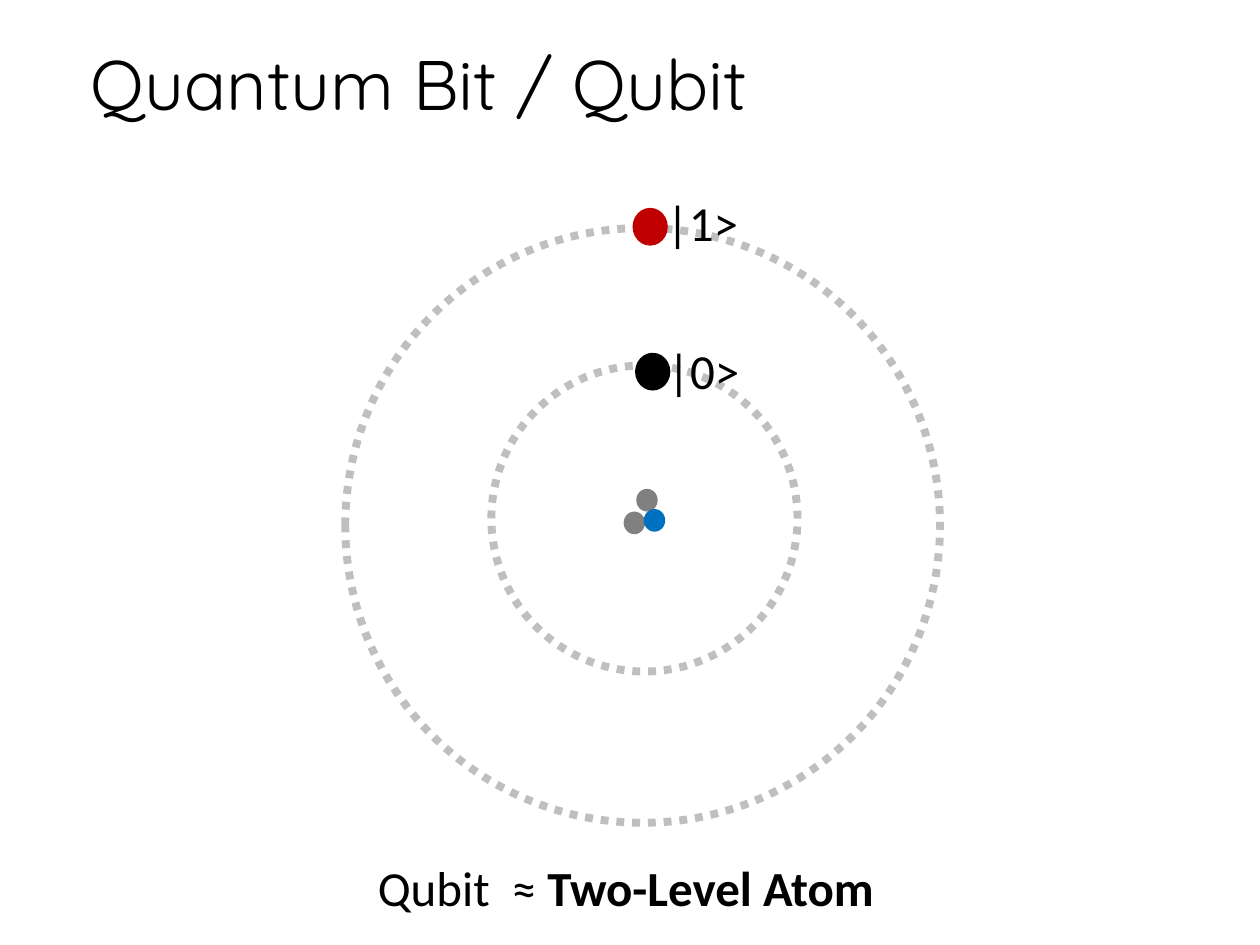
"""Build the qubit slide: a two-level atom with its nucleus and two orbits."""
from pptx import Presentation
from pptx.dml.color import RGBColor
from pptx.enum.dml import MSO_LINE
from pptx.enum.shapes import MSO_SHAPE as SHAPE
from pptx.enum.text import MSO_ANCHOR as ANCHOR, MSO_AUTO_SIZE as FIT
from pptx.util import Inches, Pt

BLACK = RGBColor(0x00, 0x00, 0x00)
WHITE = RGBColor(0xFF, 0xFF, 0xFF)
SILVER = RGBColor(0xBF, 0xBF, 0xBF)
GRAY = RGBColor(0x80, 0x80, 0x80)
RED = RGBColor(0xC0, 0x00, 0x00)
BLUE = RGBColor(0x00, 0x70, 0xC0)

prs = Presentation()
prs.slide_width, prs.slide_height = Inches(10), Inches(7.5)
COL, ROW = prs.slide_width / 100, prs.slide_height / 75
s = prs.slides.add_slide(prs.slide_layouts[6])


def add_ball(shapes, col, row, cols, rows, color):
    sp = shapes.add_shape(SHAPE.OVAL, int(col * COL), int(row * ROW),
                          int(cols * COL), int(rows * ROW))
    sp.shadow.inherit = False
    sp.fill.solid()
    sp.fill.fore_color.rgb = color
    sp.line.fill.background()
    return sp


def add_text(col, row, cols, rows, runs, frame, font):
    tb = s.shapes.add_textbox(int(col * COL), int(row * ROW),
                              int(cols * COL), int(rows * ROW))
    tf = tb.text_frame
    for key, value in frame.items():
        setattr(tf, key, value)
    p = tf.paragraphs[0]
    for text, bold in runs:
        r = p.add_run()
        r.text = text
        r.font.color.rgb = BLACK
        for key, value in {**font, "bold": bold}.items():
            setattr(r.font, key, value)
    return p


for col, row, size in [(27.4, 18.1, 47.2), (39, 29, 24.3)]:
    orbit = add_ball(s.shapes, col, row, size, size, WHITE)
    orbit.line.color.rgb = SILVER
    for key, value in {"width": Pt(4.5), "dash_style": MSO_LINE.ROUND_DOT}.items():
        setattr(orbit.line, key, value)

title = add_text(6.2, -0.3, 86.2, 14.5, [("Quantum Bit / Qubit", False)],
                 {"word_wrap": True, "vertical_anchor": ANCHOR.MIDDLE},
                 {"name": "Quicksand", "size": Pt(40)})
title.line_spacing = 0.9

LABEL_FRAME = {"word_wrap": False, "auto_size": FIT.SHAPE_TO_FIT_TEXT}
LABEL_FONT = {"name": "Calibri", "size": Pt(28)}

for col, row, color, label_col, label_row, label in [
    (50.4, 28, BLACK, 52, 26.5, "|0>"),
    (50.2, 16.5, RED, 51.9, 14.8, "|1>"),
]:
    add_ball(s.shapes, col, row, 2.8, 3, color)
    add_text(label_col, label_row, 7.8, 5.7, [(label, False)], LABEL_FRAME, LABEL_FONT)

add_text(29, 67.6, 42.2, 5.7, [("Qubit  ≈ ", False), ("Two-Level Atom", True)],
         LABEL_FRAME, LABEL_FONT)

nucleus = s.shapes.add_group_shape()
for col, row, color in [(49.5, 40.6, GRAY), (50.5, 38.8, GRAY), (51.1, 40.4, BLUE)]:
    add_ball(nucleus.shapes, col, row, 1.7, 1.8, color)

prs.save("out.pptx")
